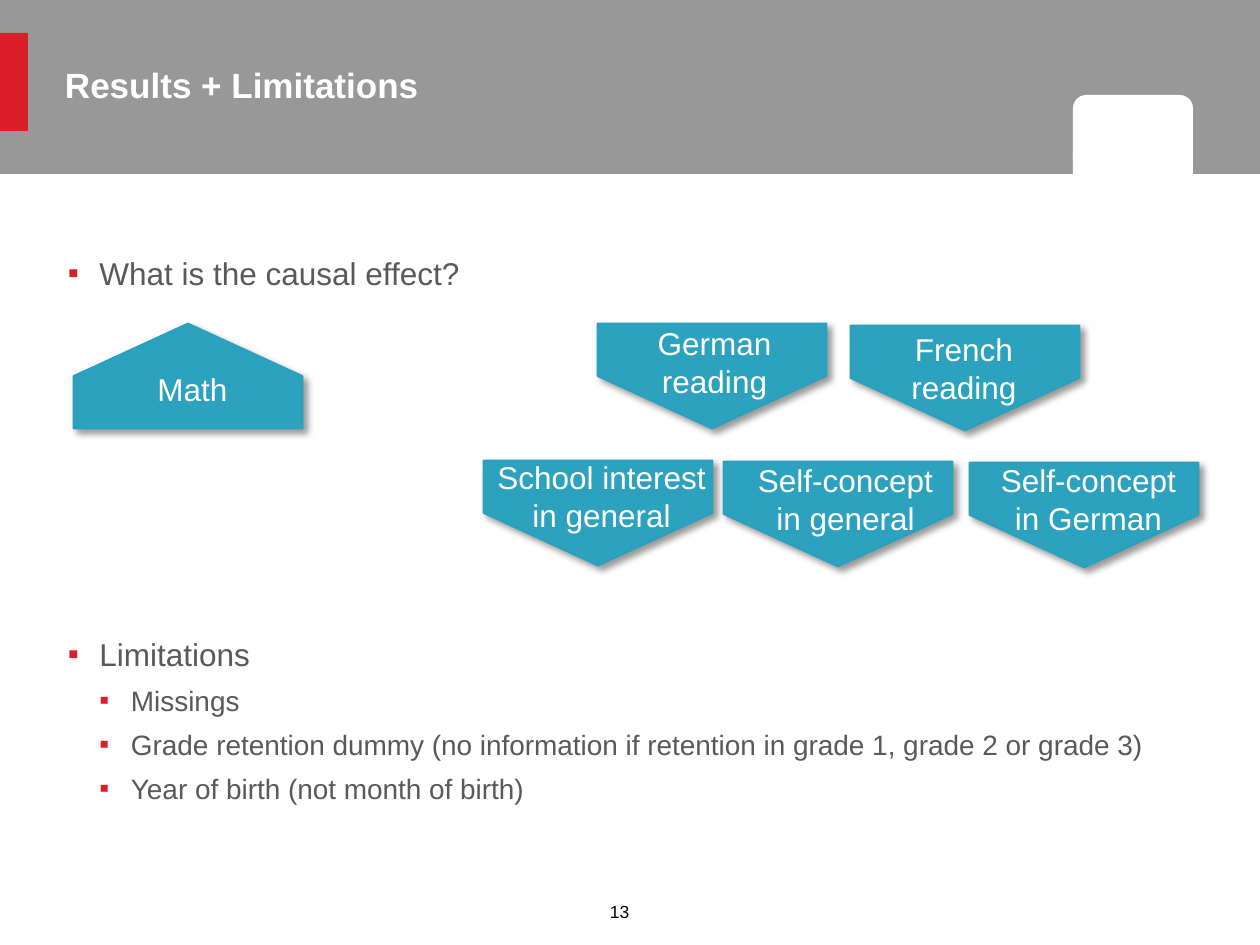
from lxml.etree import SubElement
from pptx import Presentation
from pptx.dml.color import RGBColor
from pptx.enum.shapes import MSO_SHAPE as Shape
from pptx.enum.text import MSO_ANCHOR as Anchor, MSO_AUTO_SIZE as AutoSize, PP_ALIGN as Align
from pptx.oxml.ns import qn
from pptx.util import Pt

PX = 914400 / 126
COLORS = {
    "band": "7F7F7F", "red": "DA1F28", "white": "FFFFFF", "black": "000000",
    "text": "595959", "arrow": "2DA2BF", "arrow_line": "28A1BE",
}


def px(value):
    return round(value * PX)


def rgb(name):
    return RGBColor.from_string(COLORS[name])


class SlideBuilder:
    font = "Arial"
    inset = (12, 6)
    plate = (105, 229)

    def __init__(self, presentation):
        self.slide = presentation.slides.add_slide(presentation.slide_layouts[5])
        self.shapes = self.slide.shapes

    def style(self, paragraph, size, color, bold=False, align=Align.LEFT):
        paragraph.alignment = align
        for run in paragraph.runs:
            font = run.font
            font.name, font.size, font.bold = self.font, Pt(size), bold
            font.color.rgb = rgb(color)

    def prepare(self, text_frame, inset):
        text_frame.word_wrap = True
        text_frame.auto_size = AutoSize.NONE
        text_frame.vertical_anchor = Anchor.TOP
        text_frame.margin_left = text_frame.margin_right = px(inset[0])
        text_frame.margin_top = text_frame.margin_bottom = px(inset[1])

    def title(self, text, left, top, width, height):
        title = self.shapes.title
        title.left, title.top, title.width, title.height = map(px, (left, top, width, height))
        self.prepare(title.text_frame, (0, 0))
        title.text_frame.text = text
        self.style(title.text_frame.paragraphs[0], 20, "white", bold=True)
        # Bring the title in front of the header band
        self.shapes._spTree.append(title._element)

    def shape(self, kind, left, top, width, height, fill, alpha=None):
        shape = self.shapes.add_shape(kind, *map(px, (left, top, width, height)))
        shape.shadow.inherit = False
        shape.fill.solid()
        shape.fill.fore_color.rgb = rgb(fill)
        shape.line.fill.background()
        if alpha:
            color = shape._element.spPr.find(f"{qn('a:solidFill')}/{qn('a:srgbClr')}")
            SubElement(color, qn("a:alpha"), val=str(alpha * 1000))
        return shape

    def text(self, text, left, top, width, height, size, color, align=Align.LEFT):
        box = self.shapes.add_textbox(*map(px, (left, top, width, height)))
        self.prepare(box.text_frame, self.inset)
        box.text_frame.text = text
        self.style(box.text_frame.paragraphs[0], size, color, align=align)

    def bullets(self, items, left, top, width, height):
        box = self.shapes.add_textbox(*map(px, (left, top, width, height)))
        frame = box.text_frame
        self.prepare(frame, (0, 6))
        frame.text = "\n".join(text for text, level in items)
        for index, (paragraph, (text, level)) in enumerate(zip(frame.paragraphs, items)):
            properties = paragraph._p.get_or_add_pPr()
            properties.set("marL", str(px(31.5 * (level + 1))))
            properties.set("indent", str(-px(31.5)))
            bullet_color = SubElement(properties, qn("a:buClr"))
            SubElement(bullet_color, qn("a:srgbClr"), val=COLORS["red"])
            SubElement(properties, qn("a:buFont"), typeface=self.font)
            SubElement(properties, qn("a:buChar"), char="▪")
            paragraph.level = level
            if index:
                paragraph.space_before = Pt(6)
            self.style(paragraph, 18 - 2 * level, "text")

    def block_arrow(self, label, center, label_box, rotation=90):
        width, height = self.plate
        arrow = self.shape(Shape.PENTAGON, center[0] - width / 2, center[1] - height / 2,
                           width, height, "arrow")
        arrow.rotation = rotation
        arrow.line.color.rgb = rgb("arrow_line")
        arrow.line.width = Pt(1)
        self.drop_shadow(arrow)
        self.text(label, *label_box, 18, "white", Align.CENTER)

    def drop_shadow(self, shape):
        effects = shape._element.spPr.find(qn("a:effectLst"))
        shadow = SubElement(effects, qn("a:outerShdw"), blurRad=str(Pt(4)), dist=str(Pt(3)),
                            dir=str(45 * 60000), rotWithShape="0")
        color = SubElement(shadow, qn("a:srgbClr"), val=COLORS["black"])
        SubElement(color, qn("a:alpha"), val="40000")


def main():
    presentation = Presentation()
    presentation.slide_width, presentation.slide_height = px(1260), px(945)
    builder = SlideBuilder(presentation)

    # Header band with red marker and white tab
    builder.shape(Shape.RECTANGLE, 0, 0, 1260, 174, "band", alpha=80)
    builder.shape(Shape.RECTANGLE, 0, 33, 28, 98, "red")
    builder.shape(Shape.ROUNDED_RECTANGLE, 1073, 95, 120, 79, "white")
    builder.shape(Shape.RECTANGLE, 1073, 151, 120, 24, "white")
    builder.title("Results + Limitations", 65, 63, 943, 94)

    # Bullets above and below the arrows
    builder.bullets([("What is the causal effect?", 0)], 68, 248, 1121, 50)
    builder.bullets([
        ("Limitations", 0),
        ("Missings", 1),
        ("Grade retention dummy (no information if retention in grade 1, grade 2 or grade 3)", 1),
        ("Year of birth (not month of birth)", 1),
    ], 68, 629, 1121, 200)

    # Arrows pointing down
    for label, center, label_box in [
        ("German reading", (712, 376), (591, 318, 247, 89)),
        ("French reading", (965, 378), (863, 324, 202, 89)),
        ("School interest in general", (598, 513), (478, 452, 247, 89)),
        ("Self-concept in general", (838, 514), (731, 455, 229, 89)),
        ("Self-concept in German", (1084, 515), (974, 455, 229, 89)),
    ]:
        builder.block_arrow(label, center, label_box)

    # Arrow pointing up
    builder.block_arrow("Math", (188, 376), (78, 364, 229, 50), rotation=270)

    # Slide number
    builder.text("13", 598, 895, 63, 34, 10, "black")
    presentation.save("out.pptx")


if __name__ == "__main__":
    main()
